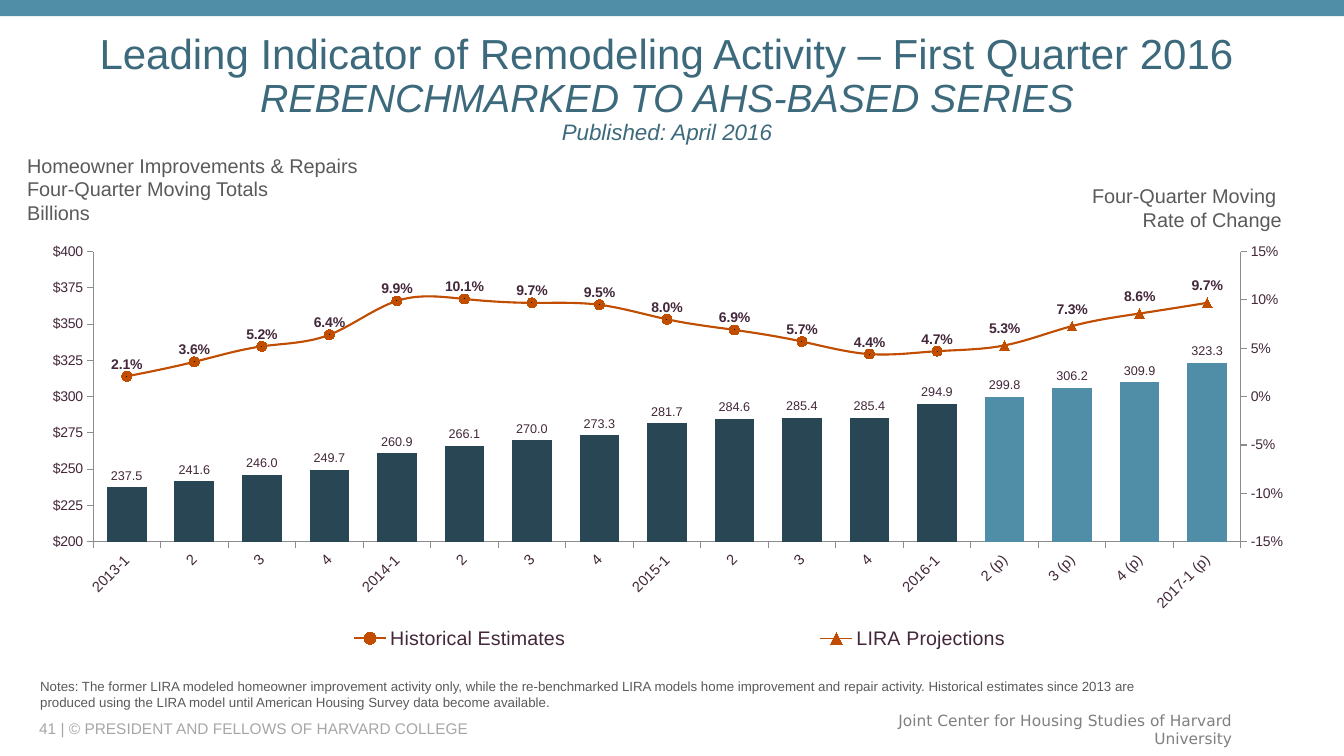
from pptx import Presentation
from pptx.chart.axis import ValueAxis
from pptx.chart.data import CategoryChartData
from pptx.dml.color import RGBColor
from pptx.enum.chart import XL_CHART_TYPE as ChartType, XL_LABEL_POSITION as LabelPosition
from pptx.enum.chart import XL_LEGEND_POSITION as LegendPosition, XL_MARKER_STYLE as Marker
from pptx.enum.chart import XL_TICK_MARK as TickMark
from pptx.enum.shapes import MSO_SHAPE as Shape
from pptx.enum.text import MSO_ANCHOR as Anchor, PP_ALIGN as Align
from pptx.oxml import parse_xml
from pptx.oxml.ns import nsdecls
from pptx.util import Inches, Pt

WIDTH, HEIGHT = 13.33, 7.5
MARGIN = 0.29
CONTENT_WIDTH = 12.65
TEAL, NAVY, ORANGE, PLUM = "508DA6", "284653", "C14D00", "43273A"
TITLE_COLOR, TEXT_COLOR, AXIS_COLOR = "3C6A7C", "5A5A5A", "8C8C8C"

TITLE_LINES = [
    ("Leading Indicator of Remodeling Activity – First Quarter 2016", 30, False),
    ("REBENCHMARKED TO AHS-BASED SERIES", 28, True),
    ("Published: April 2016", 16, True),
]
TEXTS = [
    (["Homeowner Improvements & Repairs", "Four-Quarter Moving Totals", "Billions"],
     (0.17, 1.47, 4.94, 0.82), dict(size=14.2, color=TEXT_COLOR)),
    (["Four-Quarter Moving ", "Rate of Change"],
     (9.75, 1.77, 3.06, 0.58), dict(size=14.2, color=TEXT_COLOR, align=Align.RIGHT)),
    (["Notes: The former LIRA modeled homeowner improvement activity only, while the "
      "re-benchmarked LIRA models home improvement and repair activity. Historical estimates "
      "since 2013 are produced using the LIRA model until American Housing Survey data become "
      "available."],
     (0.3, 6.68, 11.39, 0.42), dict(size=9.5, color=TEXT_COLOR)),
    (["41 | © PRESIDENT AND FELLOWS OF HARVARD COLLEGE"],
     (MARGIN, 7.13, 7.92, 0.2), dict(size=11, color="A6A6A6", anchor=Anchor.MIDDLE)),
    (["Joint Center for Housing Studies of Harvard University"],
     (8.42, 7.09, 3.9, 0.29),
     dict(size=11, color="808080", font="DejaVu Sans", align=Align.RIGHT, anchor=Anchor.MIDDLE)),
]
QUARTERS = ["2013-1", "2", "3", "4", "2014-1", "2", "3", "4", "2015-1", "2", "3", "4",
            "2016-1", "2 (p)", "3 (p)", "4 (p)", "2017-1 (p)"]
TOTALS = [237.5, 241.6, 246.0, 249.7, 260.9, 266.1, 270.0, 273.3, 281.7, 284.6, 285.4, 285.4,
          294.9, 299.8, 306.2, 309.9, 323.3]
RATES = [0.021, 0.036, 0.052, 0.064, 0.099, 0.101, 0.097, 0.095, 0.08, 0.069, 0.057, 0.044,
         0.047, 0.053, 0.073, 0.086, 0.097]
FIRST_PROJECTION = 13
HISTORICAL = range(FIRST_PROJECTION)
PROJECTED = range(FIRST_PROJECTION, len(QUARTERS))
LINES = [("Historical Estimates", Marker.CIRCLE, 1.5, PROJECTED),
         ("LIRA Projections", Marker.TRIANGLE, 0.75, HISTORICAL)]


def rgb(color):
    return RGBColor.from_string(color)


def fill(target, color):
    target.fill.solid()
    target.fill.fore_color.rgb = rgb(color)


def style_font(font, size, color, name="Arial", bold=False, italic=False):
    font.size, font.name, font.bold, font.italic = Pt(size), name, bold, italic
    font.color.rgb = rgb(color)


def add_text(slide, lines, box, size, color, font="Arial", align=Align.LEFT, anchor=Anchor.TOP):
    frame = slide.shapes.add_textbox(*map(Inches, box)).text_frame
    frame.word_wrap = True
    frame.vertical_anchor = anchor
    for index, line in enumerate(lines):
        paragraph = frame.add_paragraph() if index else frame.paragraphs[0]
        paragraph.alignment = align
        run = paragraph.add_run()
        run.text = line
        style_font(run.font, size, color, font)


def chart_xml(tag, content):
    return parse_xml(f"<c:{tag} {nsdecls('c')}>{content}</c:{tag}>")


def manual_layout(inner, **box):
    target = '<c:layoutTarget val="inner"/>' if inner else ""
    modes = '<c:xMode val="edge"/><c:yMode val="edge"/>'
    sides = "".join(f'<c:{side} val="{share}"/>' for side, share in box.items())
    return chart_xml("layout", f"<c:manualLayout>{target}{modes}{sides}</c:manualLayout>")


def remove_layout(element):
    for layout in element.findall(element.tag.split("}")[0] + "}layout"):
        element.remove(layout)


def style_axis(axis, size):
    axis.has_major_gridlines = False
    axis.major_tick_mark = TickMark.OUTSIDE
    axis.minor_tick_mark = TickMark.NONE
    axis.format.line.color.rgb = rgb(AXIS_COLOR)
    axis.format.line.width = Pt(0.75)
    style_font(axis.tick_labels.font, size, PLUM)


def style_value_axis(axis, low, high, step, number_format):
    style_axis(axis, 10)
    axis.minimum_scale, axis.maximum_scale, axis.major_unit = low, high, step
    axis.tick_labels.number_format = number_format
    axis.tick_labels.number_format_is_linked = False


def add_labels(series, number_format, position, size, bold=False):
    labels = series.data_labels
    labels.show_value = True
    labels.number_format = number_format
    labels.number_format_is_linked = False
    labels.position = position
    style_font(labels.font, size, PLUM, bold=bold)


def move_lines_to_right_axis(chart):
    plot_area = chart._chartSpace.xpath("c:chart/c:plotArea")[0]
    bar_chart = plot_area.xpath("c:barChart")[0]
    line_chart = chart_xml("lineChart", '<c:grouping val="standard"/><c:varyColors val="0"/>'
                           '<c:marker val="1"/><c:axId val="5001"/><c:axId val="5002"/>')
    for series in bar_chart.xpath("c:ser")[1:]:
        for flag in series.xpath("c:invertIfNegative"):
            series.remove(flag)
        line_chart.xpath("c:marker")[0].addprevious(series)
    bar_chart.addnext(line_chart)
    scaling = '<c:scaling><c:orientation val="minMax"/></c:scaling>'
    hidden_axis = chart_xml("catAx", f'<c:axId val="5001"/>{scaling}<c:delete val="1"/>'
                            '<c:axPos val="b"/><c:crossAx val="5002"/>')
    right_axis = chart_xml("valAx", f'<c:axId val="5002"/>{scaling}<c:delete val="0"/>'
                           '<c:axPos val="r"/><c:tickLblPos val="nextTo"/><c:crossAx val="5001"/>'
                           '<c:crosses val="max"/><c:crossBetween val="between"/>')
    left_axis = plot_area.xpath("c:valAx")[0]
    left_axis.addnext(hidden_axis)
    hidden_axis.addnext(right_axis)
    remove_layout(plot_area)
    plot_area.insert(0, manual_layout(True, x=0.05, y=0.04, w=0.9, h=0.69))
    return ValueAxis(right_axis)


def add_legend(chart):
    chart.has_legend = True
    legend = chart.legend
    legend.position = LegendPosition.BOTTOM
    legend.include_in_layout = False
    style_font(legend.font, 14, PLUM)
    remove_layout(legend._element)
    place = legend._element.xpath("c:legendPos")[0]
    place.addnext(manual_layout(False, x=0.06, y=0.92, w=0.9, h=0.08))
    place.addnext(chart_xml("legendEntry", '<c:idx val="0"/><c:delete val="1"/>'))


def add_remodeling_chart(slide):
    data = CategoryChartData()
    data.categories = QUARTERS
    data.add_series("Series 1", TOTALS, "#,##0.0")
    for name, *_ in LINES:
        data.add_series(name, RATES, "0.0%")
    box = map(Inches, (MARGIN, 2.33, CONTENT_WIDTH, 4.17))
    chart = slide.shapes.add_chart(ChartType.COLUMN_CLUSTERED, *box, data).chart
    style_font(chart.font, 18, PLUM)
    chart.has_title = False
    style_axis(chart.category_axis, 10.5)
    chart.category_axis._element.xpath("c:txPr/a:bodyPr")[0].set("rot", "-2700000")
    style_value_axis(chart.value_axis, 200, 400, 25, '"$"#,##0')
    style_value_axis(move_lines_to_right_axis(chart), -0.15, 0.15, 0.05, "0%")

    columns, lines = chart.plots
    columns.gap_width = 70
    columns.vary_by_categories = False
    totals = columns.series[0]
    fill(totals.format, NAVY)
    for index in PROJECTED:
        fill(totals.points[index].format, TEAL)
    add_labels(totals, "#,##0.0", LabelPosition.OUTSIDE_END, 9)

    for series, (_, marker, width, unmarked) in zip(lines.series, LINES):
        series.smooth = True
        series.format.line.color.rgb = rgb(ORANGE)
        series.format.line.width = Pt(width)
        series.marker.style, series.marker.size = marker, 7
        fill(series.marker.format, ORANGE)
        series.marker.format.line.color.rgb = rgb(ORANGE)
        for index in unmarked:
            point = series.points[index]
            point.marker.style = Marker.NONE
            point.format.line.color.rgb = rgb(ORANGE)
            point.format.line.width = Pt(width)
    add_labels(lines.series[1], "0.0%", LabelPosition.ABOVE, 10, bold=True)
    add_legend(chart)


def add_title(slide):
    title = slide.shapes.title
    title.left, title.top, title.width, title.height = map(
        Inches, (MARGIN, 0.4, CONTENT_WIDTH, 0.97))
    title.text_frame.vertical_anchor = Anchor.MIDDLE
    paragraph = title.text_frame.paragraphs[0]
    paragraph.alignment, paragraph.line_spacing = Align.CENTER, 0.9
    for index, (text, size, italic) in enumerate(TITLE_LINES):
        if index:
            paragraph.add_line_break()
        run = paragraph.add_run()
        run.text = text
        style_font(run.font, size, TITLE_COLOR, italic=italic)


presentation = Presentation()
presentation.slide_width, presentation.slide_height = Inches(WIDTH), Inches(HEIGHT)
slide = presentation.slides.add_slide(presentation.slide_layouts[5])
band = slide.shapes.add_shape(Shape.RECTANGLE, 0, 0, Inches(WIDTH), Inches(0.16))
band.shadow.inherit = False
fill(band, TEAL)
band.line.fill.background()
add_title(slide)
add_remodeling_chart(slide)
for lines, box, style in TEXTS:
    add_text(slide, lines, box, **style)
presentation.save("out.pptx")
